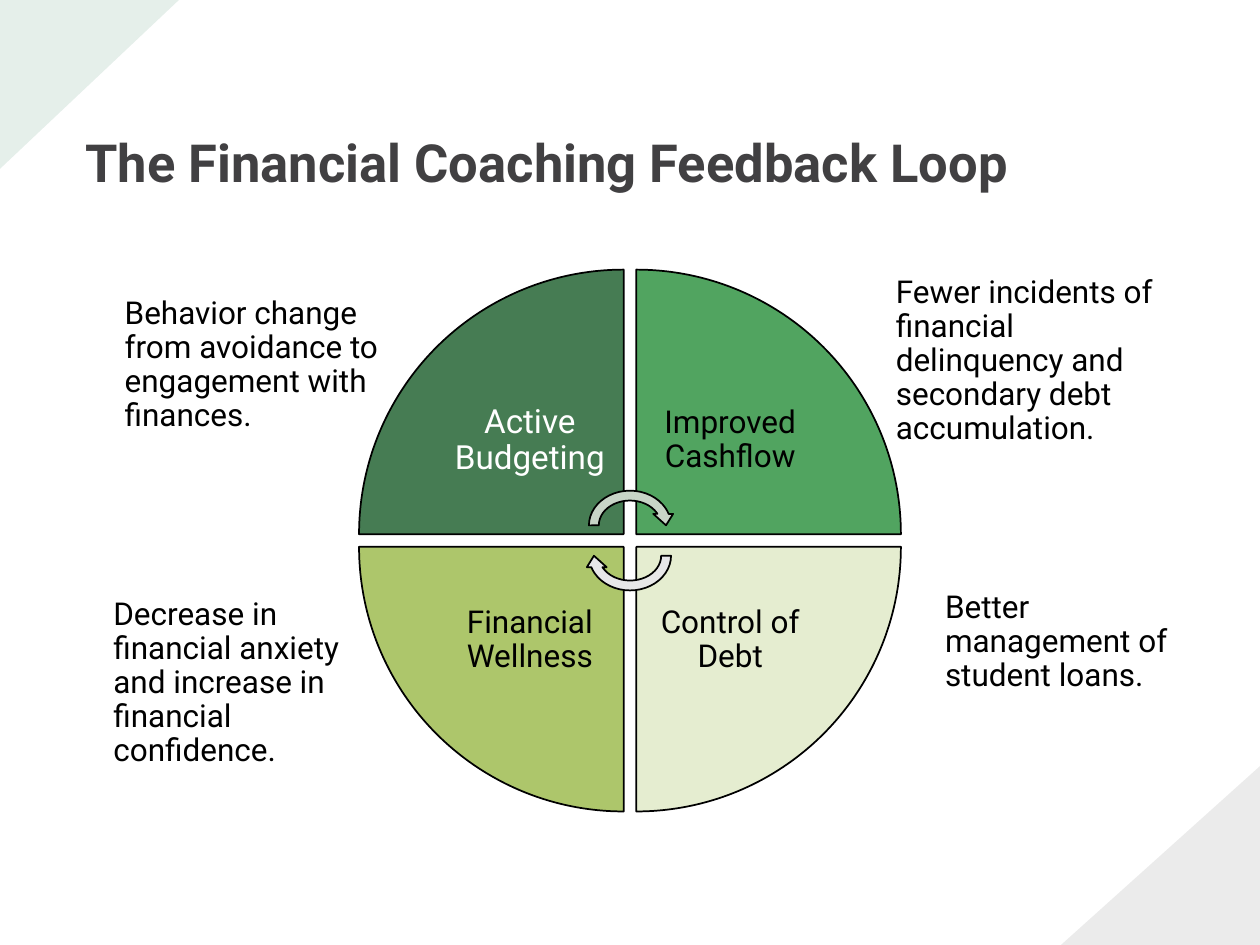
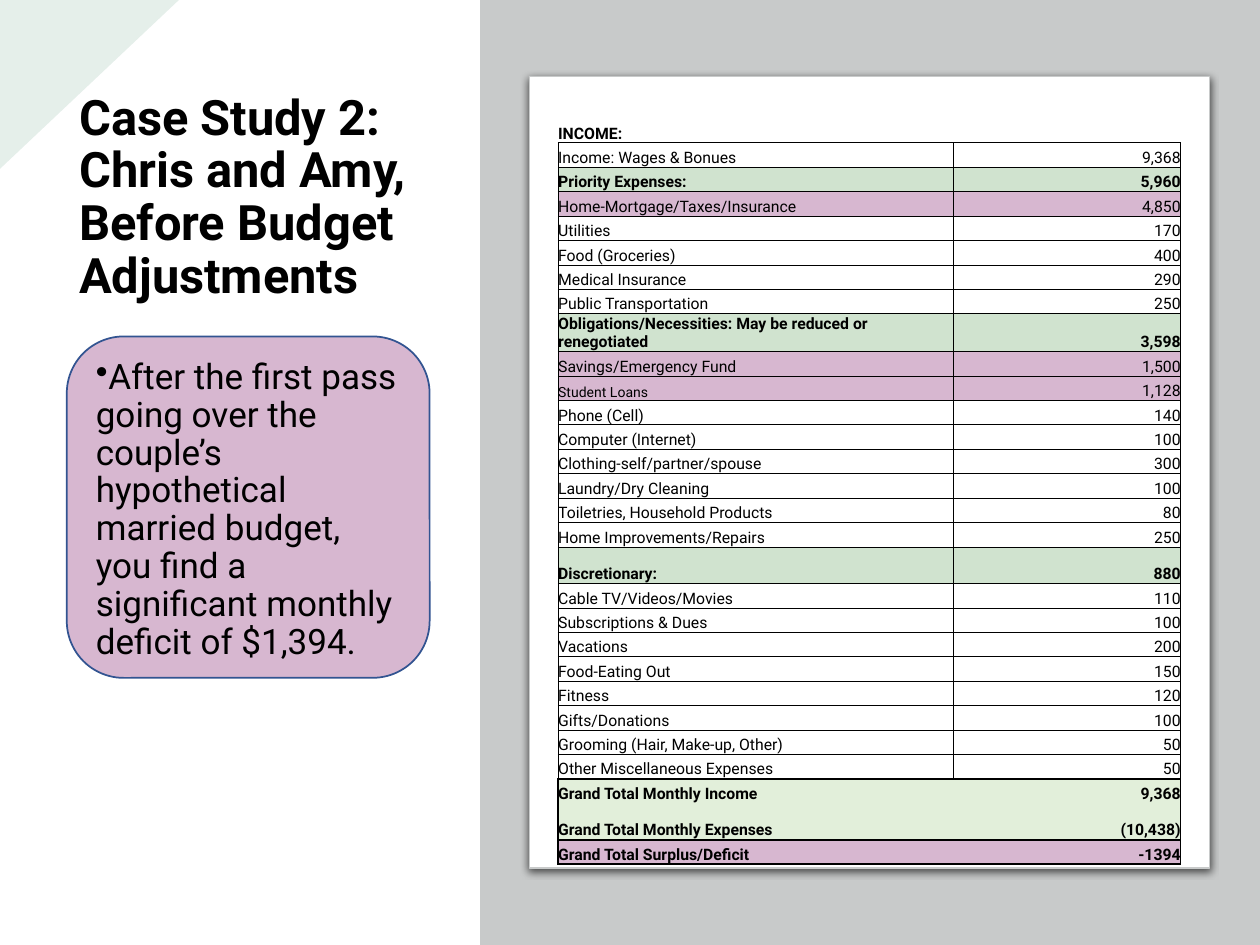
from dataclasses import dataclass

from lxml.etree import SubElement
from pptx import Presentation
from pptx.dml.color import RGBColor
from pptx.enum.shapes import MSO_SHAPE as Preset
from pptx.enum.text import MSO_ANCHOR as Anchor, PP_ALIGN as Align
from pptx.oxml import parse_xml
from pptx.oxml.ns import nsdecls, qn
from pptx.util import Inches, Pt

COLUMNS, ROWS = 40, 30
UNIT = 0.25  # inches per grid column and row


@dataclass(frozen=True)
class Theme:
    font: str = "Roboto"
    black: str = "000000"
    white: str = "FFFFFF"
    charcoal: str = "414042"
    corner_green: str = "056839"
    panel: str = "C8CACA"
    mauve: str = "D7B7D0"
    note_line: str = "325491"
    section: str = "D0E3CF"
    total: str = "E2EFDA"
    budgeting: str = "467C53"
    cashflow: str = "51A460"
    wellness: str = "ADC66B"
    debt: str = "E5EDD0"
    arrow_top: str = "C8D4C7"
    arrow_bottom: str = "E7E7E8"
    title_size: float = 30
    case_title_size: float = 27.9
    note_size: float = 20
    lead_label_size: float = 19
    body_size: float = 18
    cell_size: float = 9
    small_cell_size: float = 8


THEME = Theme()

# Side across, side down, rotation, fill, label, label colour, label size
QUADRANTS = [
    (-1, -1, 0, THEME.budgeting, "Active Budgeting", THEME.white, THEME.lead_label_size),
    (1, -1, 90, THEME.cashflow, "Improved Cashflow", THEME.black, THEME.body_size),
    (1, 1, 180, THEME.debt, "Control of Debt", THEME.black, THEME.body_size),
    (-1, 1, 270, THEME.wellness, "Financial Wellness", THEME.black, THEME.body_size),
]

CALLOUTS = [
    ((28.96, 18.48, 8.44, 7.44), "Better management of student loans."),
    ((2.56, 18.72, 9.88, 6.88),
     "Decrease in financial anxiety and increase in financial confidence."),
    ((27.4, 8.48, 10.04, 6.68),
     "Fewer incidents of financial delinquency and secondary debt accumulation."),
    ((2.92, 9.16, 9.48, 5.56),
     "Behavior change from avoidance to engagement with finances."),
]

# Label, amount, kind of row
BUDGET = [
    ("INCOME:", "", "heading"),
    ("Income: Wages & Bonues", "9,368", "item"),
    ("Priority Expenses:", "5,960", "section"),
    ("Home-Mortgage/Taxes/Insurance", "4,850", "flagged"),
    ("Utilities", "170", "item"),
    ("Food (Groceries)", "400", "item"),
    ("Medical Insurance", "290", "item"),
    ("Public Transportation", "250", "item"),
    ("Obligations/Necessities: May be reduced or renegotiated", "3,598", "section"),
    ("Savings/Emergency Fund", "1,500", "flagged"),
    ("Student Loans", "1,128", "flagged"),
    ("Phone (Cell)", "140", "item"),
    ("Computer (Internet)", "100", "item"),
    ("Clothing-self/partner/spouse", "300", "item"),
    ("Laundry/Dry Cleaning", "100", "item"),
    ("Toiletries, Household Products", "80", "item"),
    ("Home Improvements/Repairs", "250", "item"),
    ("Discretionary:", "880", "section"),
    ("Cable TV/Videos/Movies", "110", "item"),
    ("Subscriptions & Dues", "100", "item"),
    ("Vacations", "200", "item"),
    ("Food-Eating Out", "150", "item"),
    ("Fitness", "120", "item"),
    ("Gifts/Donations", "100", "item"),
    ("Grooming (Hair, Make-up, Other)", "50", "item"),
    ("Other Miscellaneous Expenses", "50", "last item"),
    ("Grand Total Monthly Income", "9,368", "income total"),
    ("Grand Total Monthly Expenses", "(10,438)", "expense total"),
    ("Grand Total Surplus/Deficit", "-1394", "balance"),
]
TALL_ROWS = {"Obligations/Necessities: May be reduced or renegotiated",
             "Discretionary:", "Grand Total Monthly Expenses"}
ROW_FILLS = {"section": THEME.section, "flagged": THEME.mauve, "balance": THEME.mauve,
             "income total": THEME.total, "expense total": THEME.total}
BOLD_KINDS = {"heading", "section", "income total", "expense total", "balance"}
THIN_GRID = {"L": 0.5, "R": 0.5, "T": 0.5, "B": 0.5}
ROW_BORDERS = {
    "heading": {"B": 0.5},
    "last item": {**THIN_GRID, "B": 1},
    "income total": {"T": 1},
    "expense total": {"B": 1},
    "balance": {"T": 1, "B": 1},
}


def grid(units):
    return Inches(units * UNIT)


def color(value):
    return RGBColor.from_string(value)


def write(frame, text, size=THEME.body_size, fill=THEME.black, bold=False, align=Align.LEFT,
          spacing=0.9, after=0, bullet=False):
    """Put one formatted paragraph in a text frame."""
    frame.word_wrap = True
    paragraph = frame.paragraphs[0]
    paragraph.alignment = align
    paragraph.line_spacing = spacing
    paragraph.space_after = Pt(after)
    if bullet:
        properties = paragraph._p.get_or_add_pPr()
        properties.set("marL", "0")
        properties.set("indent", str(-Inches(0.25)))
        SubElement(properties, qn("a:buChar")).set("char", "•")
    if not text:
        SubElement(paragraph._p, qn("a:endParaRPr")).set("sz", str(int(size * 100)))
        return
    run = paragraph.add_run()
    run.text = text
    run.font.name, run.font.size, run.font.bold = THEME.font, Pt(size), bold
    run.font.color.rgb = color(fill)


def set_margins(target, left, top, right, bottom):
    target.margin_left, target.margin_top = Inches(left), Inches(top)
    target.margin_right, target.margin_bottom = Inches(right), Inches(bottom)


def set_borders(cell, widths):
    """Draw the named cell sides and clear the others."""
    properties = cell._tc.get_or_add_tcPr()
    for position, side in enumerate("LRTB"):
        width = widths.get(side, 0)
        paint = (f'<a:solidFill><a:srgbClr val="{THEME.black}"/></a:solidFill>'
                 if width else "<a:noFill/>")
        properties.insert(position, parse_xml(
            f'<a:ln{side} {nsdecls("a")} w="{Pt(width)}">{paint}</a:ln{side}>'))


class Deck:
    """Holds the presentation, its theme and the slide being built."""

    def __init__(self, theme):
        self.theme = theme
        self.presentation = Presentation()
        self.presentation.slide_width = grid(COLUMNS)
        self.presentation.slide_height = grid(ROWS)
        self.slide = None

    def start_slide(self):
        self.slide = self.presentation.slides.add_slide(self.presentation.slide_layouts[6])
        self.corner((0, 0, 5.68, 5.36), 90, self.theme.corner_green)

    def shape(self, preset, box, fill, line=None, line_width=1, rotation=0):
        """Add a preset shape; box is the area it covers once turned."""
        left, top, width, height = box
        if rotation % 180:
            left, top = left + (width - height) / 2, top + (height - width) / 2
            width, height = height, width
        shape = self.slide.shapes.add_shape(preset, *map(grid, (left, top, width, height)))
        shape.rotation = rotation
        shape.shadow.inherit = False
        shape.fill.solid()
        shape.fill.fore_color.rgb = color(fill)
        if line:
            shape.line.color.rgb = color(line)
            shape.line.width = Pt(line_width)
        else:
            shape.line.fill.background()
        return shape

    def corner(self, box, rotation, fill):
        """Add a corner triangle at ten percent opacity."""
        triangle = self.shape(Preset.RIGHT_TRIANGLE, box, fill, rotation=rotation)
        paint = triangle._element.spPr.find(qn("a:solidFill"))
        SubElement(paint[0], qn("a:alpha")).set("val", "10000")

    def text(self, box, text, anchor=Anchor.TOP, margins=(0.1, 0.05, 0.1, 0.05), **style):
        frame = self.slide.shapes.add_textbox(*map(grid, box)).text_frame
        frame.vertical_anchor = anchor
        set_margins(frame, *margins)
        write(frame, text, **style)

    def title(self, box, text, **style):
        self.text(box, text, bold=True, **style)

    def note(self, box, text):
        shape = self.shape(Preset.ROUNDED_RECTANGLE, box, self.theme.mauve, self.theme.note_line)
        shape.text_frame.vertical_anchor = Anchor.TOP
        write(shape.text_frame, text, size=self.theme.note_size, after=6, bullet=True)

    def page(self, box):
        """Add a white sheet with a soft shadow below it."""
        sheet = self.shape(Preset.ROUNDED_RECTANGLE, box, self.theme.white, self.theme.panel, 0.75)
        sheet.adjustments[0] = 0
        sheet._element.spPr.find(qn("a:effectLst")).append(parse_xml(
            f'<a:outerShdw {nsdecls("a")} blurRad="{Pt(4.5)}" dist="{Pt(1.5)}" dir="5400000">'
            f'<a:srgbClr val="{self.theme.black}"><a:alpha val="63000"/></a:srgbClr>'
            "</a:outerShdw>"))

    def budget_table(self, left, top, widths, height, records):
        frame = self.slide.shapes.add_table(
            len(records), len(widths), *map(grid, (left, top, sum(widths), height)))
        table = frame.table
        table.first_row = table.horz_banding = False
        for column, width in zip(table.columns, widths):
            column.width = grid(width)
        row_height = height / len(records)
        for row, (label, amount, kind) in zip(table.rows, records):
            row.height = grid(row_height * (1.5 if label in TALL_ROWS else 1))
            label_size = (self.theme.small_cell_size if label == "Student Loans"
                          else self.theme.cell_size)
            fields = [(label, label_size, Align.LEFT, "L"),
                      (amount, self.theme.cell_size, Align.RIGHT, "R")]
            for cell, (text, size, align, outer_side) in zip(row.cells, fields):
                cell.vertical_anchor = Anchor.BOTTOM
                set_margins(cell, 0, 0, 0, 0)
                write(cell.text_frame, text, size=size, bold=kind in BOLD_KINDS,
                      align=align, spacing=1.0)
                if kind in ROW_FILLS:
                    cell.fill.solid()
                    cell.fill.fore_color.rgb = color(ROW_FILLS[kind])
                else:
                    cell.fill.background()
                borders = ROW_BORDERS.get(kind, THIN_GRID)
                if "total" in kind or kind == "balance":
                    borders = {**borders, outer_side: 1}
                set_borders(cell, borders)


def build_feedback_loop(deck):
    theme = deck.theme
    deck.start_slide()
    deck.corner((33.68, 24.32, 6.32, 5.68), 270, theme.charcoal)
    deck.title((2.32, 1, 35.32, 5.36), "The Financial Coaching Feedback Loop",
               anchor=Anchor.BOTTOM, size=theme.title_size, fill=theme.charcoal)
    for box, text in CALLOUTS:
        deck.text(box, text, margins=(0.26, 0.07, 0.07, 0.07))

    center_x, center_y, half_gap = 20, 17.16, 0.2
    wedge_size, label_size = 8.4, 5.96

    def quadrant_box(across, down, size):
        """Return a square that touches the centre gap on the given sides."""
        left, top = (center + half_gap if side > 0 else center - half_gap - size
                     for center, side in ((center_x, across), (center_y, down)))
        return left, top, size, size

    for across, down, rotation, fill, label, label_color, font_size in QUADRANTS:
        deck.shape(Preset.PIE_WEDGE, quadrant_box(across, down, wedge_size), fill,
                   theme.black, rotation=rotation)
        deck.text(quadrant_box(across, down, label_size), label, anchor=Anchor.MIDDLE,
                  margins=(0.14,) * 4, size=font_size, fill=label_color, align=Align.CENTER)

    arrow_width, arrow_height = 2.92, 2.52
    for offset, rotation, fill in ((-0.48, 0, theme.arrow_top), (0.48, 180, theme.arrow_bottom)):
        box = (center_x - arrow_width / 2, center_y + offset - arrow_height / 2,
               arrow_width, arrow_height)
        deck.shape(Preset.CIRCULAR_ARROW, box, fill, theme.black, rotation=rotation)


def build_case_study(deck):
    theme = deck.theme
    deck.start_slide()
    deck.title((2.12, 2.76, 11.52, 7.08), "Case Study 2: Chris and Amy, Before Budget Adjustments",
               anchor=Anchor.MIDDLE, size=theme.case_title_size)
    deck.note((2.12, 10.68, 11.52, 10.84),
              "After the first pass going over the couple’s hypothetical married budget, "
              "you find a significant monthly deficit of $1,394.")
    deck.shape(Preset.RECTANGLE, (15.24, 0, COLUMNS - 15.24, ROWS), theme.panel)
    deck.page((16.8, 2.44, 21.6, 25.12))
    deck.budget_table(17.72, 3.76, (12.56, 7.2), 22.48, BUDGET)


def main():
    deck = Deck(THEME)
    build_feedback_loop(deck)
    build_case_study(deck)
    deck.presentation.save("out.pptx")


if __name__ == "__main__":
    main()
